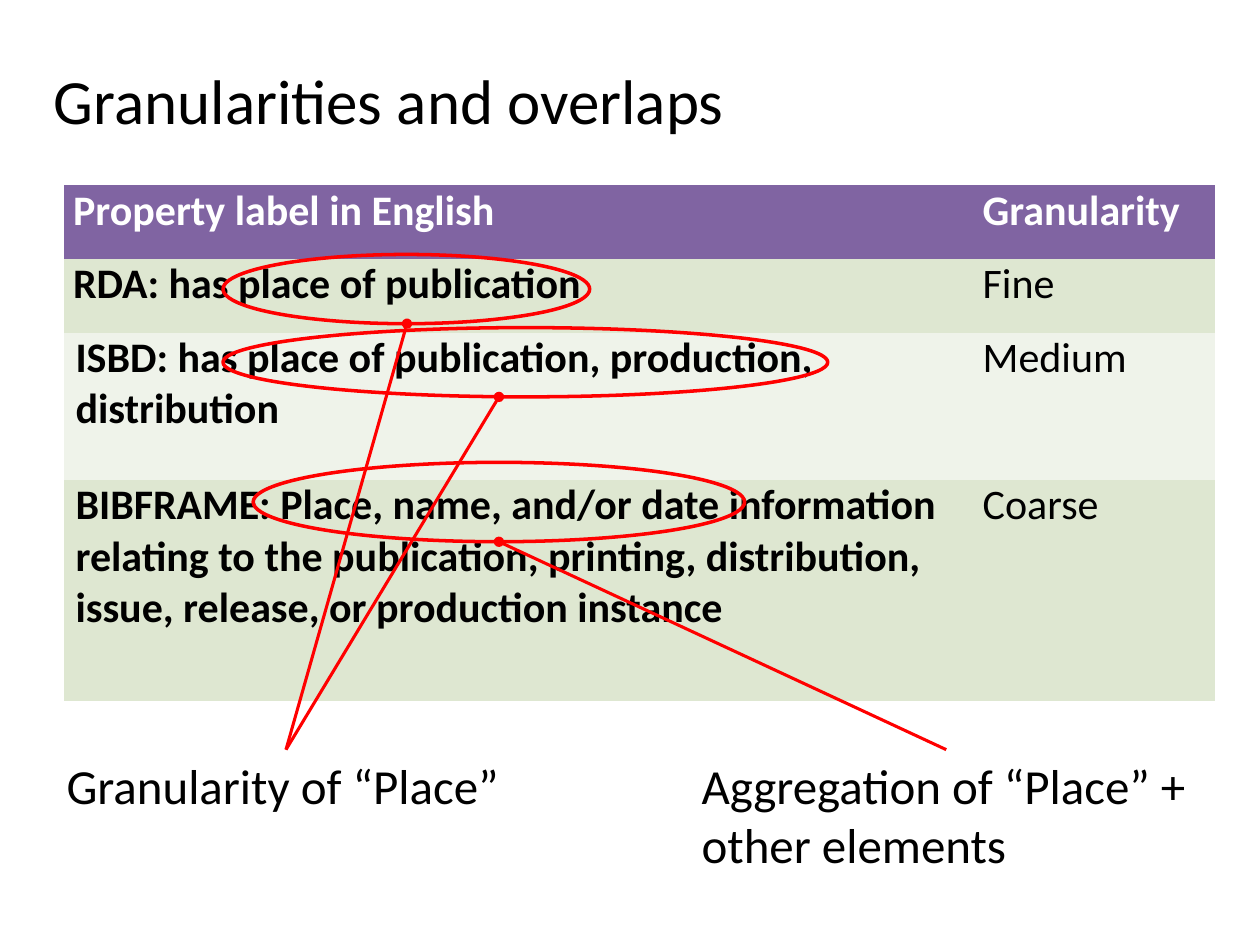
from lxml import etree
from pptx import Presentation
from pptx import util as u
from pptx.dml.color import RGBColor
from pptx.enum import shapes, text
from pptx.oxml.ns import qn

COLORS = {"ink": "000000", "header": "8064A2", "header_text": "FFFFFF",
          "band": "DEE7D1", "light_band": "EFF3EA", "mark": "FF0000"}
NO_TABLE_STYLE = "{2D5ABB26-0587-4C30-8999-92F81FD0307C}"

deck = Presentation()
deck.slide_width, deck.slide_height = u.Inches(10), u.Inches(7.5)
page = deck.slides.add_slide(deck.slide_layouts[6])


def place(*percents):
    """Turn alternating shares of slide width and height (in %) into lengths."""
    sides = (deck.slide_width, deck.slide_height)
    return [u.Emu(round(sides[i % 2] * share / 100)) for i, share in enumerate(percents)]


def write(para, words, size, color="ink", bold=False):
    span = para.add_run()
    span.text = words
    span.font.name, span.font.size, span.font.bold = "Calibri", u.Pt(size), bold
    span.font.color.rgb = RGBColor.from_string(COLORS[color])


# Table: label, granularity, lines of height, fill, label indent in inches
ROWS = [
    ("Property label in English", "Granularity", 1, "header", 0),
    ("RDA: has place of publication", "Fine", 1, "band", 0),
    ("ISBD: has place of publication, production, distribution", "Medium", 2, "light_band", 0.02),
    ("BIBFRAME: Place, name, and/or date information relating to the publication, "
     "printing, distribution, issue, release, or production instance", "Coarse", 3, "band", 0.02),
]
ROW_UNIT = 7.8
total_units = sum(row[2] for row in ROWS)
table = page.shapes.add_table(len(ROWS), 2, *place(5.1, 19.6, 91.3, ROW_UNIT * total_units)).table
table._tbl.tblPr.find(qn("a:tableStyleId")).text = NO_TABLE_STYLE
for column, share in zip(table.columns, (72.2, 19.1)):
    column.width = place(share)[0]

for r, (label, granularity, units, fill, indent) in enumerate(ROWS):
    table.rows[r].height = place(0, ROW_UNIT * units)[1]
    header = r == 0
    for c, words in enumerate((label, granularity)):
        cell = table.cell(r, c)
        cell.margin_left = cell.margin_right = u.Inches(0.07)
        cell.margin_top = cell.margin_bottom = 0
        cell.fill.solid()
        cell.fill.fore_color.rgb = RGBColor.from_string(COLORS[fill])
        para = cell.text_frame.paragraphs[0]
        if header:
            para.alignment = text.PP_ALIGN.JUSTIFY
        if indent and c == 0:
            para._p.get_or_add_pPr().set("marL", str(u.Inches(indent)))
        write(para, words, 24, "header_text" if header else "ink", header or c == 0)

# Title and the two captions under the table
CAPTION_TOP = 79.33
for area, size, lines in [
    ((3.3, 5.87, 55.7, 9.47), 36, ["Granularities and overlaps"]),
    ((4.3, CAPTION_TOP, 36.7, 7.6), 28, ["Granularity of “Place”"]),
    ((54.7, CAPTION_TOP, 40.8, 13.87), 28, ["Aggregation of “Place” +", "other elements"]),
]:
    frame = page.shapes.add_textbox(*place(*area)).text_frame
    frame.word_wrap = False
    frame.auto_size = text.MSO_AUTO_SIZE.SHAPE_TO_FIT_TEXT
    for i, line in enumerate(lines):
        write(frame.add_paragraph() if i else frame.paragraphs[0], line, size)

# Rings around the overlapping words
RINGS = [(17.7, 26.93, 29.1, 7.33), (17.7, 34.67, 48, 7.33), (20.1, 48.93, 39, 8.4)]
for area in RINGS:
    ring = page.shapes.add_shape(shapes.MSO_SHAPE.OVAL, *place(*area))
    ring.shadow.inherit = False
    ring.fill.background()
    ring.line.color.rgb = RGBColor.from_string(COLORS["mark"])
    ring.line.width = u.Pt(2)

# Pointers from the captions up to the bottom edge of each ring
for start, end, (_, top, _, height) in zip((22.7, 22.7, 75.1), (32.3, 39.6, 39.6), RINGS):
    pointer = page.shapes.add_connector(
        shapes.MSO_CONNECTOR.STRAIGHT, *place(start, CAPTION_TOP, end, top + height))
    pointer.line.color.rgb = RGBColor.from_string(COLORS["mark"])
    pointer.line.width = u.Pt(1.75)
    etree.SubElement(pointer.line._get_or_add_ln(), qn("a:tailEnd"), type="oval")
    etree.SubElement(pointer._element.spPr, qn("a:effectLst"))

deck.save("out.pptx")
